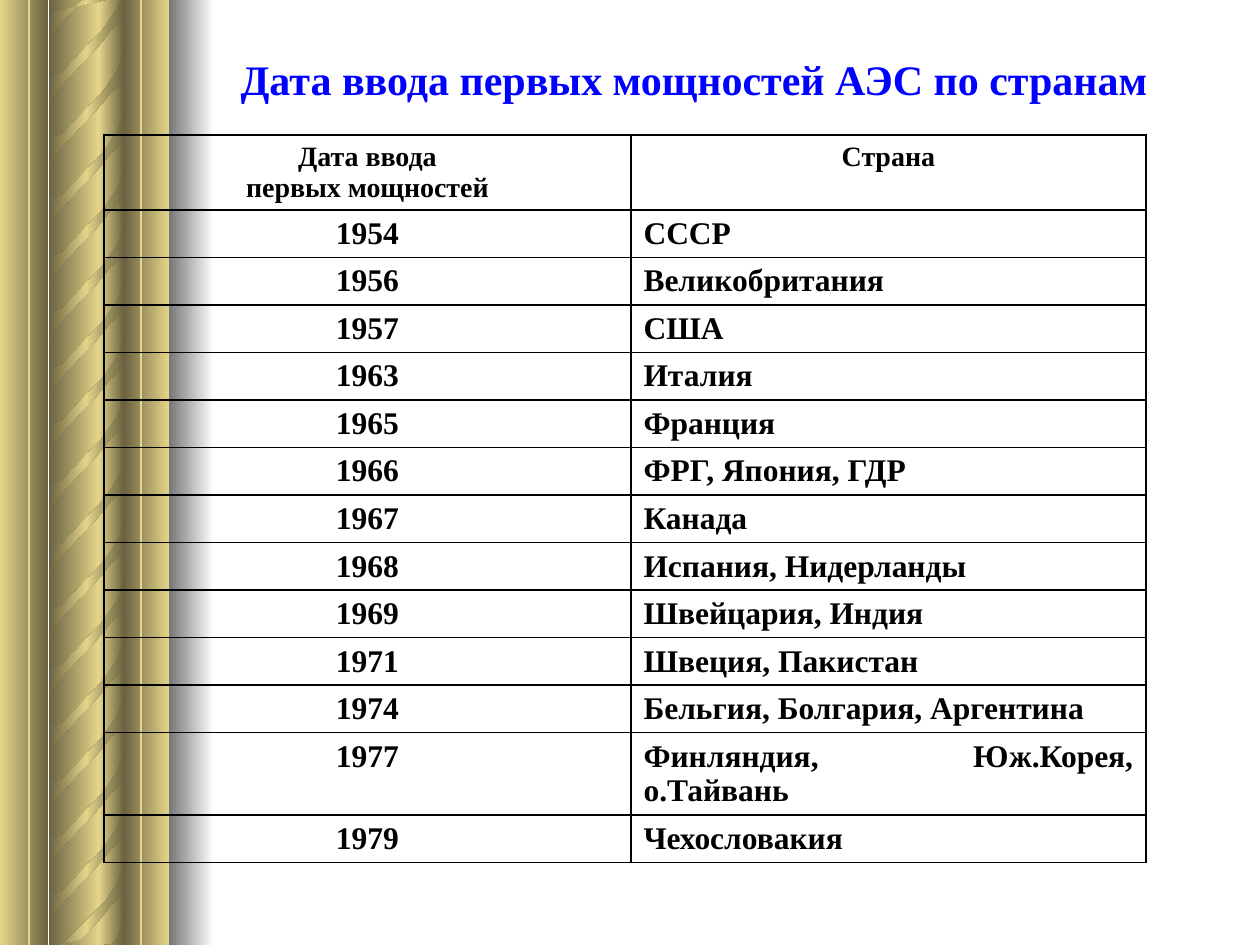
from lxml.etree import SubElement
from pptx import Presentation
from pptx.dml.color import RGBColor
from pptx.enum.shapes import MSO_CONNECTOR, MSO_SHAPE
from pptx.enum.text import MSO_ANCHOR, PP_ALIGN
from pptx.oxml.ns import qn
from pptx.util import Pt

PX = 7257  # EMU per px, 126 px to the inch
WIDTH, HEIGHT = 1260, 945
FONT = "Times New Roman"
GOLD, BRONZE, GREY, WHITE = "E5D58A", "6A6240", "767676", "FFFFFF"
BLACK, BLUE = "000000", "0000FF"

TITLE = "Дата ввода первых мощностей АЭС по странам"
HEADER = ("Дата ввода\nпервых мощностей", "Страна")
ROWS = [
    ("1954", "СССР"),
    ("1956", "Великобритания"),
    ("1957", "США"),
    ("1963", "Италия"),
    ("1965", "Франция"),
    ("1966", "ФРГ, Япония, ГДР"),
    ("1967", "Канада"),
    ("1968", "Испания, Нидерланды"),
    ("1969", "Швейцария, Индия"),
    ("1971", "Швеция, Пакистан"),
    ("1974", "Бельгия, Болгария, Аргентина"),
    ("1977", "Финляндия, Юж.Корея, о.Тайвань"),
    ("1979", "Чехословакия"),
]
TABLE_LEFT, TABLE_TOP = 104, 135
COL_WIDTHS = (527, 515)
HEADER_HEIGHT, ROW_HEIGHT, TALL_ROW_HEIGHT = 75, 47, 82
TALL_YEAR = "1977"

# Column panels: left, width, gradient colours
PANELS = [
    (99, 25, (GOLD, BRONZE)),
    (0, 48, (GOLD, BRONZE)),
    (49, 50, (BRONZE, GOLD)),
    (124, 45, (BRONZE, GOLD)),
]
# Column halves, back to front: top, bottom, tops of the rope strands
HALVES = [
    (470, HEIGHT, (577, 636, 692, 748, 804, 860, 518, 456, 914)),
    (0, 473, (108, 165, 221, 277, 333, 47, -15, -78, 393)),
]
STRAND = [
    (124, 11), (124, 42), (122, 40), (117, 40), (115, 42), (111, 45),
    (102, 57), (81, 79), (59, 103), (55, 110), (52, 117), (50, 127),
    (49, 141), (49, 79), (49, 86), (50, 88), (53, 89), (55, 89), (58, 89),
    (62, 88), (105, 42), (113, 30), (117, 24), (120, 18), (122, 8), (124, 0),
]
EDGE_LINES = (29, 141)


def rgb(color):
    return RGBColor.from_string(color)


def paint_gradient(sp, colors):
    """Fill a shape left to right with evenly spaced colours."""
    sp.shadow.inherit = False
    sp.line.fill.background()
    sp.fill.gradient()
    sp.fill.gradient_angle = 0
    stops = sp._element.spPr.find(qn("a:gradFill")).find(qn("a:gsLst"))
    for stop in list(stops):
        stops.remove(stop)
    for i, color in enumerate(colors):
        stop = SubElement(stops, qn("a:gs"), pos=str(100000 * i // (len(colors) - 1)))
        SubElement(stop, qn("a:srgbClr"), val=color)


def add_panel(shapes, left, top, width, height, colors):
    sp = shapes.add_shape(MSO_SHAPE.RECTANGLE, left * PX, top * PX, width * PX, height * PX)
    paint_gradient(sp, colors)


def add_strand(shapes, top):
    points = [(x, min(max(top + y, 0), HEIGHT)) for x, y in STRAND]
    builder = shapes.build_freeform(*points[0], scale=PX)
    builder.add_line_segments(points[1:], close=True)
    paint_gradient(builder.convert_to_shape(), (BRONZE, GOLD, BRONZE))


def add_edge_line(shapes, x):
    line = shapes.add_connector(MSO_CONNECTOR.STRAIGHT, x * PX, 0, x * PX, HEIGHT * PX)
    line.line.color.rgb = rgb(GOLD)
    line.line.width = Pt(1)
    SubElement(line._element.spPr, qn("a:effectLst"))


def add_column(shapes):
    for top, bottom, strand_tops in HALVES:
        for left, width, colors in PANELS:
            add_panel(shapes, left, top, width, bottom - top, colors)
        for strand_top in strand_tops:
            add_strand(shapes, strand_top)
    add_panel(shapes, 169, 0, 45, HEIGHT, (GREY, WHITE))
    for x in EDGE_LINES:
        add_edge_line(shapes, x)


def write(tf, text, size, color, align):
    tf.text = text
    for p in tf.paragraphs:
        p.alignment = align
        for r in p.runs:
            r.font.name = FONT
            r.font.size = Pt(size)
            r.font.bold = True
            r.font.color.rgb = rgb(color)


def style_cell(cell):
    """Black 1 pt borders and no fill, so the column shows through."""
    tc_pr = cell._tc.get_or_add_tcPr()
    for side in ("lnL", "lnR", "lnT", "lnB"):
        ln = SubElement(tc_pr, qn("a:" + side), w=str(Pt(1)))
        SubElement(SubElement(ln, qn("a:solidFill")), qn("a:srgbClr"), val=BLACK)
    cell.fill.background()


def add_dates_table(shapes):
    rows = [HEADER] + ROWS
    heights = [HEADER_HEIGHT] + [
        TALL_ROW_HEIGHT if year == TALL_YEAR else ROW_HEIGHT for year, _ in ROWS
    ]
    table = shapes.add_table(
        len(rows), len(COL_WIDTHS), TABLE_LEFT * PX, TABLE_TOP * PX,
        sum(COL_WIDTHS) * PX, sum(heights) * PX,
    ).table
    table.first_row = table.horz_banding = False
    for col, width in zip(table.columns, COL_WIDTHS):
        col.width = width * PX
    for i, (values, height) in enumerate(zip(rows, heights)):
        table.rows[i].height = height * PX
        for j, value in enumerate(values):
            cell = table.cell(i, j)
            style_cell(cell)
            centred = i == 0 or j == 0
            write(cell.text_frame, value, 16 if i == 0 else 18, BLACK,
                  PP_ALIGN.CENTER if centred else PP_ALIGN.JUSTIFY)


def add_title(shapes):
    tf = shapes.add_textbox(223 * PX, 47 * PX, 942 * PX, 63 * PX).text_frame
    tf.word_wrap = True
    tf.vertical_anchor = MSO_ANCHOR.MIDDLE
    write(tf, TITLE, 24, BLUE, PP_ALIGN.CENTER)


def main():
    prs = Presentation()
    prs.slide_width, prs.slide_height = WIDTH * PX, HEIGHT * PX
    shapes = prs.slides.add_slide(prs.slide_layouts[6]).shapes
    add_column(shapes)
    add_dates_table(shapes)
    add_title(shapes)
    prs.save("out.pptx")


if __name__ == "__main__":
    main()
